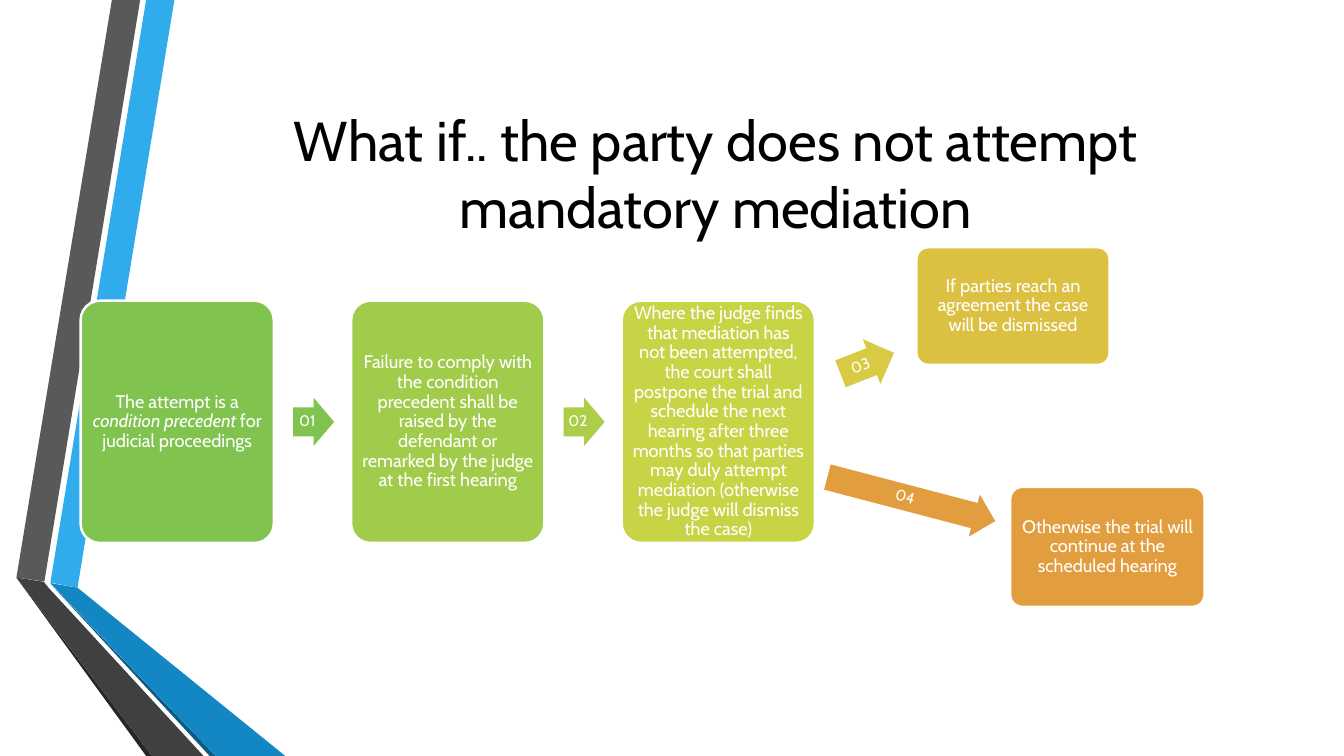
from dataclasses import dataclass

from pptx import Presentation
from pptx.dml.color import RGBColor
from pptx.enum.shapes import MSO_SHAPE
from pptx.enum.text import MSO_ANCHOR, PP_ALIGN
from pptx.util import Pt

ROUND = MSO_SHAPE.ROUNDED_RECTANGLE
ARROW = MSO_SHAPE.RIGHT_ARROW
MIDDLE = MSO_ANCHOR.MIDDLE
CENTER = PP_ALIGN.CENTER


@dataclass(frozen=True)
class Theme:
    font: str = "Cabin"
    title: int = 40
    body: int = 13
    label: int = 11
    black: str = "000000"
    white: str = "FFFFFF"
    sky: str = "30ACEC"
    blue: str = "1287C3"
    navy: str = "0C5A82"
    gray: str = "595959"
    dark: str = "404040"
    coal: str = "262626"
    green: str = "80C34F"
    leaf: str = "A1CB4A"
    moss: str = "ADCE49"
    lime: str = "C8D346"
    straw: str = "D8CB43"
    gold: str = "DBC042"
    amber: str = "E29D3E"


THEME = Theme()

# Ribbon outlines, back to front
BANDS = [
    (THEME.sky, [(36, 416.2), (55.4, 419.8), (124.6, 0), (104.4, 0)]),
    (THEME.gray, [(100.1, 0), (79.9, 0), (11.7, 412.6), (31.7, 415.4)]),
    (THEME.coal, [(11.7, 412.6), (104.4, 540), (108.7, 540)]),
    (THEME.navy, [(36, 416.9), (149.8, 540), (154.1, 540)]),
    (THEME.blue, [(36, 416.5), (154.1, 540), (203.8, 540), (55.4, 419.8)]),
    (THEME.dark, [(145.4, 540), (34.6, 419.8), (31.3, 415.6),
                  (11.7, 412.6), (108.7, 540)]),
]

# Each step: fill, then runs of (text, italic)
STEPS = [
    (THEME.green, [("The attempt is a ", False),
                   ("condition precedent ", True),
                   ("for judicial proceedings", False)]),
    (THEME.leaf, [("Failure to comply with the condition precedent shall be "
                   "raised by the defendant or remarked by the judge at the "
                   "first hearing", False)]),
    (THEME.lime, [("Where the judge finds that mediation has not been "
                   "attempted, the court shall postpone the trial and schedule "
                   "the next hearing after three months so that parties may "
                   "duly attempt mediation (otherwise the judge will dismiss "
                   "the case)", False)]),
]
STEP_X, STEP_Y, STEP_W, STEP_H, PITCH = 57.6, 214.8, 138, 173, 193.25

# Each outcome: fill, box, text
ENDS = [
    (THEME.gold, (654.6, 176.6, 138, 84),
     "If parties reach an agreement the case will be dismissed"),
    (THEME.amber, (721.6, 347.8, 138.8, 85.7),
     "Otherwise the trial will continue at the scheduled hearing"),
]

# Each arrow: fill, box, turn in degrees
ARROWS = [
    (THEME.green, (209.4, 284.2, 29.3, 34.3), 0),
    (THEME.moss, (209.4 + PITCH, 284.2, 29.3, 34.3), 0),
    (THEME.straw, (599, 242.4, 41, 34.3), 338.5),
    (THEME.amber, (589, 341, 124, 31), 14.7),
]


def color(code):
    return RGBColor.from_string(code)


def paint(shape, fill, line=None):
    shape.shadow.inherit = False
    shape.fill.solid()
    shape.fill.fore_color.rgb = color(fill)
    if line:
        shape.line.color.rgb = color(line)
        shape.line.width = Pt(1.75)
    else:
        shape.line.fill.background()


def write(shape, runs, size, ink, inset, space=1.0):
    """Fill a shape with one centred paragraph; inset is (side, top)."""
    frame = shape.text_frame
    frame.word_wrap = True
    frame.vertical_anchor = MIDDLE
    frame.margin_left = frame.margin_right = Pt(inset[0])
    frame.margin_top = frame.margin_bottom = Pt(inset[1])
    para = frame.paragraphs[0]
    para.alignment = CENTER
    para.line_spacing = space
    for text, slant in runs:
        run = para.add_run()
        run.text = text
        run.font.name = THEME.font
        run.font.size = Pt(size)
        run.font.italic = slant
        run.font.color.rgb = color(ink)


def add_band(slide, fill, points):
    start, *rest = [(Pt(x), Pt(y)) for x, y in points]
    pen = slide.shapes.build_freeform(*start)
    pen.add_line_segments(rest, close=True)
    paint(pen.convert_to_shape(), fill)


def add_title(slide, text):
    box = slide.shapes.add_textbox(Pt(116.6), Pt(54), Pt(789), Pt(138.2))
    write(box, [(text, False)], THEME.title, THEME.black, (7.2, 3.6))


def add_card(slide, fill, box, runs):
    card = slide.shapes.add_shape(ROUND, *map(Pt, box))
    card.adjustments[0] = 0.1
    paint(card, fill, THEME.white)
    write(card, runs, THEME.body, THEME.white, (3.6, 3.6), 0.9)


def add_arrow(slide, fill, box, turn, text):
    arrow = slide.shapes.add_shape(ARROW, *map(Pt, box))
    arrow.adjustments[0] = 0.6
    arrow.adjustments[1] = 0.5
    arrow.rotation = turn
    paint(arrow, fill)
    write(arrow, [(text, False)], THEME.label, THEME.white, (0, 0), 0.9)


def main():
    deck = Presentation()
    deck.slide_width, deck.slide_height = Pt(960), Pt(540)
    slide = deck.slides.add_slide(deck.slide_layouts[6])
    for fill, points in BANDS:
        add_band(slide, fill, points)
    add_title(slide, "What if.. the party does not attempt mandatory mediation")
    for i, (fill, runs) in enumerate(STEPS):
        add_card(slide, fill, (STEP_X + i * PITCH, STEP_Y, STEP_W, STEP_H), runs)
    for fill, box, text in ENDS:
        add_card(slide, fill, box, [(text, False)])
    for i, (fill, box, turn) in enumerate(ARROWS, 1):
        add_arrow(slide, fill, box, turn, f"{i:02}")
    deck.save("out.pptx")


if __name__ == "__main__":
    main()
